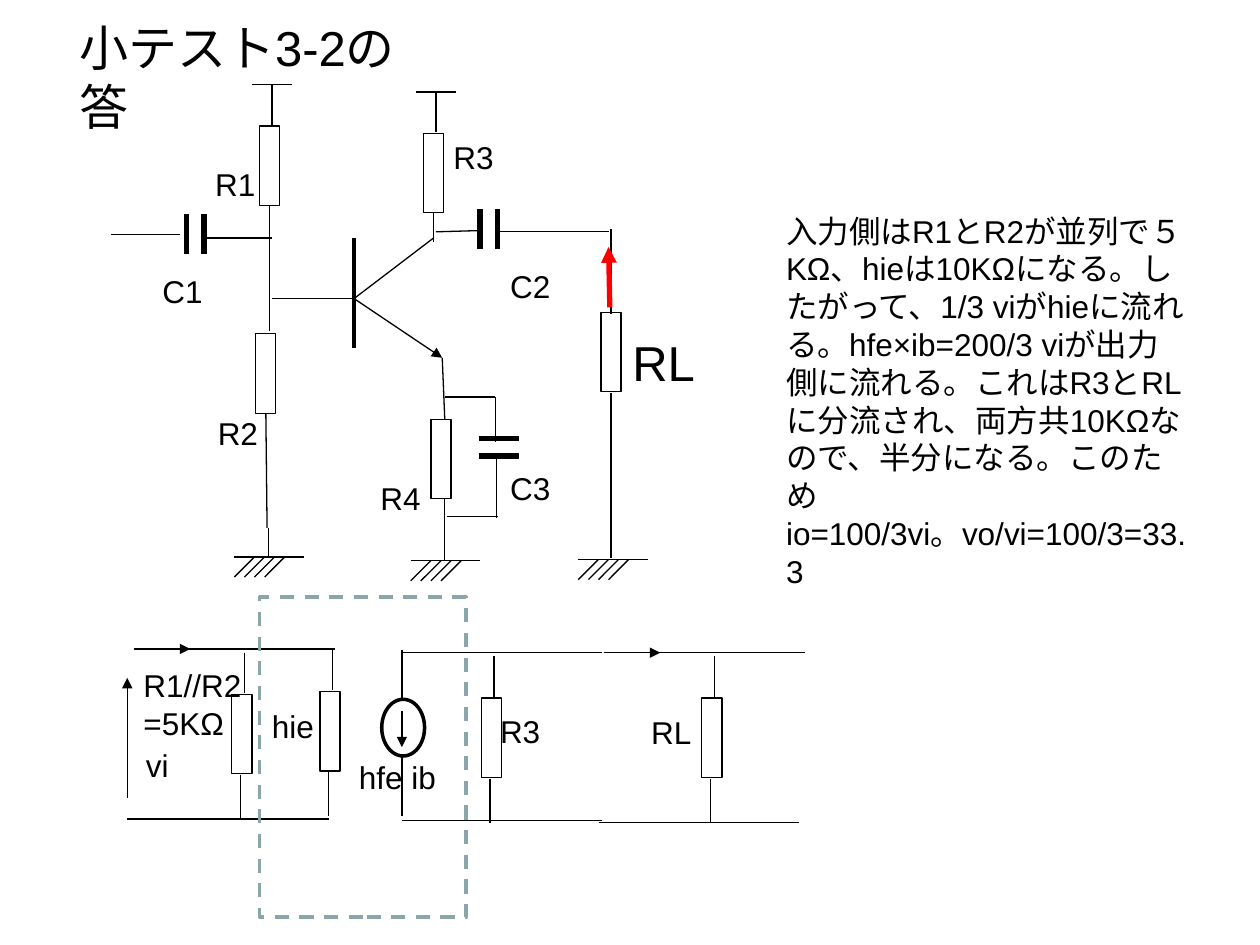
import pptx
import pptx.util
import pptx.dml.color
import pptx.enum.dml
import pptx.enum.shapes
import pptx.enum.text
import pptx.oxml
import pptx.oxml.ns

Inches = pptx.util.Inches
SHAPES = pptx.enum.shapes.MSO_SHAPE

THEME = {
    "font": "Arial",
    "ink": "000000", "signal": "FF0000", "model": "8AA6A8", "paper": "FFFFFF",
    "title": 28, "text": 18,
    "thin": 0.75, "medium": 2, "bar": 2.25, "thick": 3,
}

# Content: text as (paragraphs, left, top, width, height, size)
TITLE = ["小テスト3-2の答"]
EXPLANATION = [
    "入力側はR1とR2が並列で５KΩ、hieは10KΩになる。したがって、1/3 viがhieに流れる。"
    "hfe×ib=200/3 viが出力側に流れる。これはR3とRLに分流され、両方共10KΩなので、"
    "半分になる。このため\nio=100/3vi。vo/vi=100/3=33.3"
]
LABELS = [
    (["R1"], 1.61, 1.26, 0.52, 0.4, "text"),
    (["R2"], 1.63, 3.24, 0.52, 0.4, "text"),
    (["R3"], 3.5, 1.05, 0.52, 0.4, "text"),
    (["R4"], 2.92, 3.75, 0.52, 0.4, "text"),
    (["C1"], 1.19, 2.11, 0.52, 0.4, "text"),
    (["C2"], 3.95, 2.07, 0.52, 0.4, "text"),
    (["C3"], 3.95, 3.67, 0.52, 0.4, "text"),
    (["RL"], 4.92, 2.59, 0.71, 0.57, "title"),
    (["vi"], 1.06, 5.87, 0.38, 0.4, "text"),
    (["R1//R2", "=5KΩ"], 1.04, 5.24, 0.99, 0.71, "text"),
    (["hie"], 2.06, 5.56, 0.54, 0.4, "text"),
    (["hfe ib"], 2.75, 5.97, 0.82, 0.4, "text"),
    (["R3"], 3.87, 5.6, 0.52, 0.4, "text"),
    (["RL"], 5.07, 5.61, 0.52, 0.4, "text"),
]

# Parts, each placed by its left and top
RESISTOR = (0.16, 0.63)
SUPPLY_RESISTORS = [(3.36, 1.06), (2.06, 1)]
PLAIN_RESISTORS = [(2.03, 2.65), (3.42, 3.33), (4.77, 2.48)]
SHUNT_RESISTORS = [(2.54, 5.49), (1.84, 5.51), (3.82, 5.54), (5.57, 5.54)]
GROUNDS = [(3.26, 4.45), (1.86, 4.42), (4.59, 4.44)]
UPRIGHT_CAPACITORS = [(3.81, 1.66), (1.48, 1.7)]
FLAT_CAPACITORS = [(3.8, 3.48)]
PLATE, PLATE_GAP = 0.32, 0.14
HATCH, HATCH_STEP, GROUND_WIDTH = 0.16, 0.08, 0.55

# Wires as (x1, y1, x2, y2)
AMPLIFIER_WIRES = [
    (3.44, 1.89, 2.81, 2.37), (2.16, 2.37, 2.81, 2.37),   # collector, base
    (3.44, 1.69, 3.44, 1.92), (3.51, 2.84, 3.53, 3.33),
    (3.53, 3.96, 3.53, 4.45),
    (2.14, 1.63, 2.14, 2.35), (2.14, 2.32, 2.14, 2.63),   # bias divider
    (2.11, 3.28, 2.12, 4.19), (2.13, 4.19, 2.13, 4.43),
    (3.93, 3.51, 3.93, 3.15), (3.53, 3.15, 3.93, 3.15),   # bypass
    (3.94, 3.62, 3.94, 4.11), (3.55, 4.1, 3.95, 4.1),
    (0.88, 1.86, 1.43, 1.86), (1.61, 1.89, 2.16, 1.89),   # input
    (3.46, 1.84, 3.81, 1.83), (3.97, 1.84, 4.83, 1.84),   # output
    (4.85, 1.82, 4.85, 2.49), (4.85, 3.12, 4.85, 4.43),
]
EQUIVALENT_WIRES = [
    (3.19, 5.16, 3.19, 6.48),
    (1.06, 5.15, 2.66, 5.15), (1.01, 6.5, 2.61, 6.5),
    (3.18, 5.18, 4.78, 5.18), (3.19, 6.51, 4.78, 6.51),
    (4.79, 5.18, 6.39, 5.18), (4.75, 6.53, 6.34, 6.53),
]
TRANSISTOR_BAR = (2.81, 1.89, 2.81, 2.76)
CURRENT_SOURCE = (3.03, 5.55, 0.34, 0.45)
MODEL_FRAME = (2.06, 4.74, 1.64, 2.54)
ARROWS = [
    (2.81, 2.37, 3.51, 2.84),   # emitter
    (1.06, 5.15, 1.51, 5.15),   # input current
    (3.19, 5.64, 3.19, 5.93),   # source current
    (1.01, 6.33, 1.01, 5.38),   # input voltage
    (4.79, 5.18, 5.24, 5.18),   # output current
]
OUTPUT_ARROW = (4.84, 2.44, 4.83, 1.96)

deck = pptx.Presentation()
deck.slide_width, deck.slide_height = Inches(10), Inches(7.5)
page = deck.slides.add_slide(deck.slide_layouts[5])


def color(name):
    return pptx.dml.color.RGBColor.from_string(THEME[name])


def add_wire(ends, weight="thin", ink="ink", arrow=False):
    wire = page.shapes.add_connector(
        pptx.enum.shapes.MSO_CONNECTOR.STRAIGHT, *map(Inches, ends))
    wire.line.color.rgb = color(ink)
    wire.line.width = pptx.util.Pt(THEME[weight])
    if arrow:
        tail = pptx.oxml.parse_xml(
            '<a:tailEnd %s type="triangle"/>' % pptx.oxml.ns.nsdecls("a"))
        wire.line._get_or_add_ln().append(tail)
    wire._element.spPr.append(pptx.oxml.parse_xml(
        "<a:effectLst %s/>" % pptx.oxml.ns.nsdecls("a")))


def add_outline(kind, place, weight="thin", ink="ink", fill=None):
    shape = page.shapes.add_shape(kind, *map(Inches, place))
    shape.shadow.inherit = False
    if fill:
        shape.fill.solid()
        shape.fill.fore_color.rgb = color(fill)
    else:
        shape.fill.background()
    shape.line.color.rgb = color(ink)
    shape.line.width = pptx.util.Pt(THEME[weight])
    return shape


def write(box, paragraphs, place, size="text", wrap=False):
    box.left, box.top, box.width, box.height = map(Inches, place)
    frame = box.text_frame
    frame.auto_size = pptx.enum.text.MSO_AUTO_SIZE.NONE
    frame.word_wrap = wrap
    frame.vertical_anchor = pptx.enum.text.MSO_ANCHOR.TOP
    for i, words in enumerate(paragraphs):
        para = frame.add_paragraph() if i else frame.paragraphs[0]
        para.alignment = pptx.enum.text.PP_ALIGN.LEFT
        # Keep closing punctuation inside the right margin
        para._p.get_or_add_pPr().set("hangingPunct", "0")
        for j, line in enumerate(words.split("\n")):
            if j:
                para.add_line_break()
            span = para.add_run()
            span.text = line
            span.font.name = THEME["font"]
            span.font.size = pptx.util.Pt(THEME[size])
            span.font.color.rgb = color("ink")


def add_text(paragraphs, place, size="text", wrap=False):
    write(page.shapes.add_textbox(0, 0, 0, 0), paragraphs, place, size, wrap)


# Wires and transistor
add_wire(TRANSISTOR_BAR, "bar")
for ends in AMPLIFIER_WIRES + EQUIVALENT_WIRES:
    add_wire(ends)

# Resistors with their leads
for x, y in SUPPLY_RESISTORS + PLAIN_RESISTORS + SHUNT_RESISTORS:
    add_outline(SHAPES.RECTANGLE, (x, y, *RESISTOR))
for x, y in SUPPLY_RESISTORS + SHUNT_RESISTORS:
    add_wire((x + 0.1, y - 0.33, x + 0.1, y - 0.01))
for x, y in SUPPLY_RESISTORS:
    add_wire((x - 0.06, y - 0.33, x + 0.26, y - 0.33))
for x, y in SHUNT_RESISTORS:
    add_wire((x + 0.07, y + 0.64, x + 0.07, y + 0.99))

# Grounds
for x, y in GROUNDS:
    add_wire((x, y, x + GROUND_WIDTH, y))
    for i in range(4):
        foot = x + i * HATCH_STEP
        add_wire((foot + HATCH, y, foot, y + HATCH))

# Capacitors
for gap in (0, PLATE_GAP):
    for x, y in UPRIGHT_CAPACITORS:
        add_wire((x + gap, y, x + gap, y + PLATE), "thick")
    for x, y in FLAT_CAPACITORS:
        add_wire((x, y + gap, x + PLATE, y + gap), "thick")

# Current source, model frame and arrows
add_outline(SHAPES.OVAL, CURRENT_SOURCE, "medium", fill="paper")
frame_box = add_outline(SHAPES.RECTANGLE, MODEL_FRAME, "medium", "model")
frame_box.line.dash_style = pptx.enum.dml.MSO_LINE.DASH
for ends in ARROWS:
    add_wire(ends, arrow=True)
add_wire(OUTPUT_ARROW, "thick", "signal", arrow=True)

# Text
write(page.shapes.title, TITLE, (0.53, 0.09, 2.91, 0.57), "title", wrap=True)
for paragraphs, *place, size in LABELS:
    add_text(paragraphs, place, size)
add_text(EXPLANATION, (6.14, 1.63, 3.4, 2.52), wrap=True)

deck.save("out.pptx")
